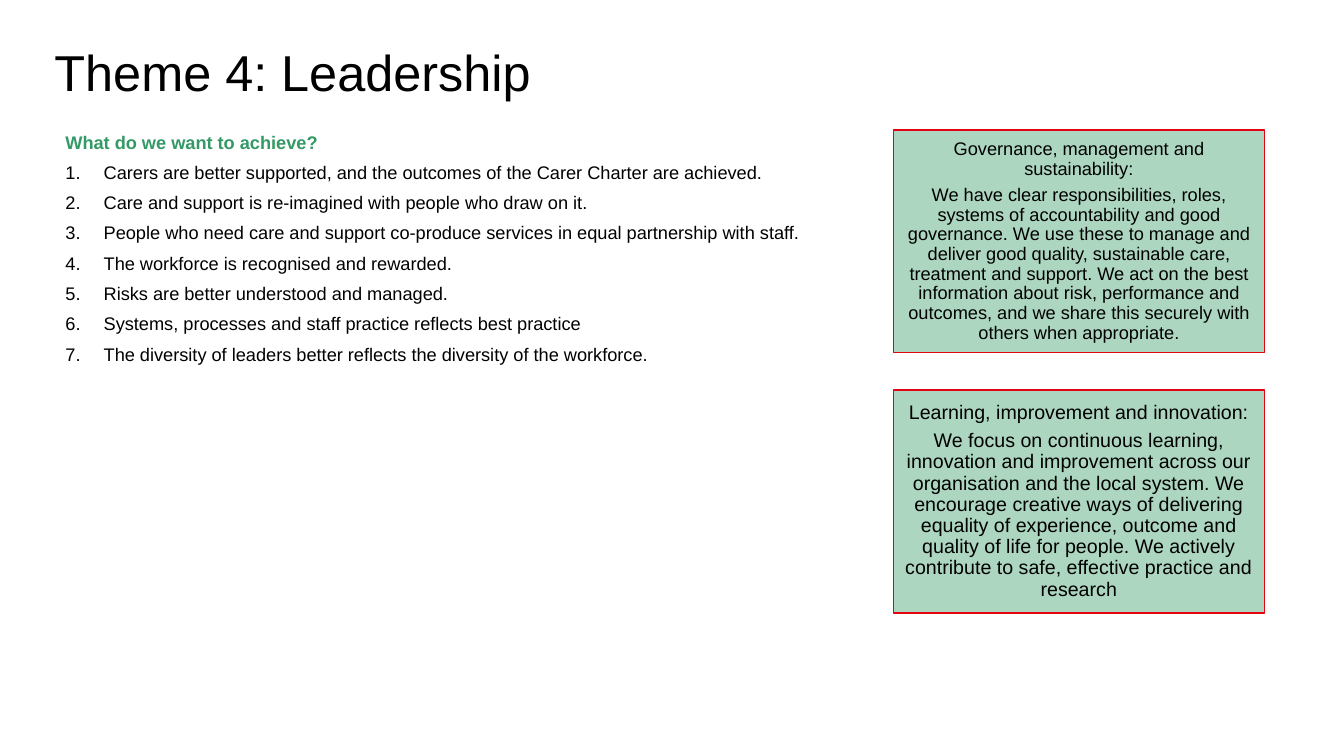
from lxml.etree import SubElement
from pptx import Presentation
from pptx.dml.color import RGBColor
from pptx.enum.shapes import MSO_SHAPE as Shape
from pptx.enum.text import MSO_ANCHOR as Anchor, MSO_AUTO_SIZE as AutoSize, PP_ALIGN as Align
from pptx.oxml.ns import qn
from pptx.util import Inches, Pt

GREEN = "339966"
RED = "E30311"
BLACK = "000000"

GOALS = [
    "Carers are better supported, and the outcomes of the Carer Charter are achieved.",
    "Care and support is re-imagined with people who draw on it.",
    "People who need care and support co-produce services in equal partnership with staff.",
    "The workforce is recognised and rewarded.",
    "Risks are better understood and managed.",
    "Systems, processes and staff practice reflects best practice",
    "The diversity of leaders better reflects the diversity of the workforce.",
]

STATEMENTS = [
    (
        "Governance, management and sustainability:",
        "We have clear responsibilities, roles, systems of accountability and good governance. "
        "We use these to manage and deliver good quality, sustainable care, treatment and support. "
        "We act on the best information about risk, performance and outcomes, and we share this "
        "securely with others when appropriate.",
        13,
        0.05,
    ),
    (
        "Learning, improvement and innovation:",
        "We focus on continuous learning, innovation and improvement across our organisation and "
        "the local system. We encourage creative ways of delivering equality of experience, outcome "
        "and quality of life for people. We actively contribute to safe, effective practice and research",
        14,
        0.06,
    ),
]


def color(value):
    return RGBColor.from_string(value)


def number_paragraph(paragraph, indent=0.38):
    properties = paragraph._p.get_or_add_pPr()
    properties.set("marL", str(Inches(indent)))
    properties.set("indent", str(-Inches(indent)))
    SubElement(properties, qn("a:buFont"), typeface="+mj-lt")
    SubElement(properties, qn("a:buAutoNum"), type="arabicPeriod")


def write_text(frame, text, size=13, fill=BLACK, bold=False, align=Align.LEFT,
               line_spacing=1.0, space_after=0, numbered=False):
    paragraph = frame.paragraphs[0] if not frame.text else frame.add_paragraph()
    if numbered:
        number_paragraph(paragraph)
    paragraph.alignment = align
    paragraph.line_spacing = line_spacing
    paragraph.space_before = Pt(0)
    paragraph.space_after = Pt(space_after)
    run = paragraph.add_run()
    run.text = text
    run.font.name = "Arial"
    run.font.size = Pt(size)
    run.font.bold = bold
    run.font.color.rgb = color(fill)


def place_title(slide, left, top, width, height):
    title = slide.shapes.title
    title.left, title.top = Inches(left), Inches(top)
    title.width, title.height = Inches(width), Inches(height)
    frame = title.text_frame
    frame.word_wrap = True
    frame.auto_size = AutoSize.SHAPE_TO_FIT_TEXT
    frame.vertical_anchor = Anchor.TOP
    write_text(frame, "Theme 4: Leadership", size=36)


def add_goals(slide, left, top, width, height):
    box = slide.shapes.add_textbox(Inches(left), Inches(top), Inches(width), Inches(height))
    frame = box.text_frame
    frame.word_wrap = True
    write_text(frame, "What do we want to achieve?", fill=GREEN, bold=True, space_after=6)
    for goal in GOALS:
        write_text(frame, goal, space_after=6, numbered=True)


def add_statement(slide, left, top, width, height, heading, body, size, inset):
    card = slide.shapes.add_shape(
        Shape.RECTANGLE, Inches(left), Inches(top), Inches(width), Inches(height))
    card.shadow.inherit = False
    card.fill.solid()
    card.fill.fore_color.rgb = color(GREEN)
    fill_color = card._element.spPr.find(qn("a:solidFill")).find(qn("a:srgbClr"))
    SubElement(fill_color, qn("a:alpha"), val="40000")
    card.line.color.rgb = color(RED)
    card.line.width = Pt(1)
    frame = card.text_frame
    frame.word_wrap = True
    frame.vertical_anchor = Anchor.MIDDLE
    frame.margin_left = frame.margin_right = Inches(inset)
    frame.margin_top = frame.margin_bottom = Inches(inset)
    for text in (heading, body):
        write_text(frame, text, size=size, align=Align.CENTER,
                   line_spacing=0.9, space_after=0.35 * size)


def add_statements(slide, left, top, width, height, gap):
    card_height = (height - gap * (len(STATEMENTS) - 1)) / len(STATEMENTS)
    for index, statement in enumerate(STATEMENTS):
        card_top = top + index * (card_height + gap)
        add_statement(slide, left, card_top, width, card_height, *statement)


def main():
    presentation = Presentation()
    presentation.slide_width = Inches(13.33)
    presentation.slide_height = Inches(7.5)
    slide = presentation.slides.add_slide(presentation.slide_layouts[5])
    place_title(slide, 0.44, 0.36, 9.86, 0.71)
    add_goals(slide, 0.55, 1.25, 8.21, 5.67)
    add_statements(slide, 8.86, 1.29, 3.68, 4.79, gap=0.37)
    presentation.save("out.pptx")


if __name__ == "__main__":
    main()
